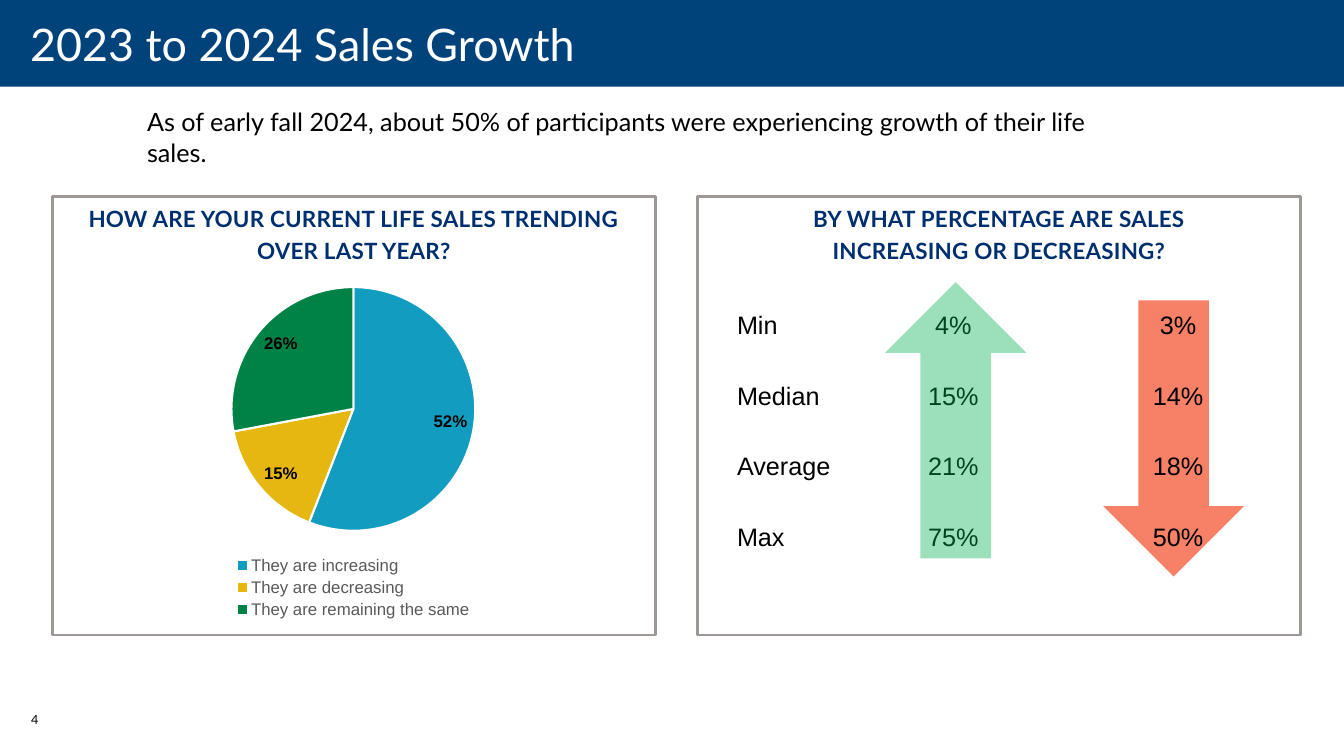
from dataclasses import dataclass

from lxml import etree
from pptx import Presentation
from pptx.chart.data import CategoryChartData
from pptx.dml.color import RGBColor
from pptx.enum.chart import XL_CHART_TYPE, XL_LABEL_POSITION as LabelAt, XL_LEGEND_POSITION as LegendAt
from pptx.enum.shapes import MSO_SHAPE as Preset
from pptx.enum.text import MSO_ANCHOR as Anchor, PP_ALIGN as Align
from pptx.oxml.ns import qn
from pptx.util import Inches, Pt

COLORS = {
    "black": "000000", "white": "FFFFFF", "banner": "00437B",
    "heading": "002F70", "frame": "9D9795", "legend": "595959",
    "up": "00B050", "down": "F22E00",
    "blue": "129DC0", "gold": "E6B711", "green": "008145",
}
NO_STYLE_NO_GRID = "{2D5ABB26-0587-4C30-8999-92F81FD0307C}"


@dataclass
class Panel:
    left: float
    heading: tuple[str, str]


@dataclass
class Arrow:
    left: float
    top: float
    color: str
    opacity: int
    rotation: int = 0


@dataclass
class Answer:
    label: str
    share: float
    color: str


PANELS = [
    Panel(0.52, ("HOW ARE YOUR CURRENT LIFE SALES TRENDING", "OVER LAST YEAR?")),
    Panel(6.92, ("BY WHAT PERCENTAGE ARE SALES", "INCREASING OR DECREASING?")),
]
DOWN_ARROW = Arrow(10.94, 2.98, "down", 60, 180)
UP_ARROW = Arrow(8.78, 2.8, "up", 39)
ANSWERS = [
    Answer("They are increasing", 0.52, "blue"),
    Answer("They are decreasing", 0.15, "gold"),
    Answer("They are remaining the same", 0.26, "green"),
]
STATISTICS = [
    ("Min", "4%", "3%"),
    ("Median", "15%", "14%"),
    ("Average", "21%", "18%"),
    ("Max", "75%", "50%"),
]


def rgb(name: str) -> RGBColor:
    return RGBColor.from_string(COLORS[name])


def style_font(font, size: float, color: str, name: str = "Lato", bold: bool = False) -> None:
    font.name, font.size, font.bold = name, Pt(size), bold
    font.color.rgb = rgb(color)


def add_span(para, text: str, size: float, color: str, name: str = "Lato", bold: bool = False):
    span = para.add_run()
    span.text = text
    style_font(span.font, size, color, name, bold)
    return span


def add_box(page, left: float, top: float, width: float, height: float, anchor=Anchor.TOP):
    box = page.shapes.add_textbox(Inches(left), Inches(top), Inches(width), Inches(height))
    box.text_frame.word_wrap = True
    box.text_frame.vertical_anchor = anchor
    return box.text_frame


def add_solid(page, preset, left: float, top: float, width: float, height: float):
    shape = page.shapes.add_shape(preset, Inches(left), Inches(top), Inches(width), Inches(height))
    shape.shadow.inherit = False
    shape.line.fill.background()
    return shape


def add_panel(page, panel: Panel) -> None:
    frame = add_solid(page, Preset.RECTANGLE, panel.left, 1.95, 5.98, 4.35)
    frame.fill.background()
    frame.line.color.rgb = rgb("frame")
    frame.line.width = Pt(2)

    para = add_box(page, panel.left, 2.08, 5.98, 0.44, Anchor.MIDDLE).paragraphs[0]
    para.alignment, para.line_spacing, para.space_after = Align.CENTER, 1.2, Pt(12.6)
    for index, line in enumerate(panel.heading):
        if index:
            para.add_line_break()
        span = add_span(para, line, 16, "heading", bold=True)
        span.font._element.set("spc", "20")


def add_arrow(page, arrow: Arrow) -> None:
    shape = add_solid(page, Preset.UP_ARROW, arrow.left, arrow.top, 1.4, 2.74)
    shape.rotation = arrow.rotation
    shape.fill.solid()
    shape.fill.fore_color.rgb = rgb(arrow.color)
    color = shape._element.spPr.find(f"{qn('a:solidFill')}/{qn('a:srgbClr')}")
    etree.SubElement(color, qn("a:alpha"), val=str(arrow.opacity * 1000))


def place_part(part, index: int, inner: bool, **fractions: float) -> None:
    """Fix a chart part at fractions of the chart area."""
    for old in part.findall(qn("c:layout")):
        part.remove(old)
    layout = etree.Element(qn("c:layout"))
    manual = etree.SubElement(layout, qn("c:manualLayout"))
    if inner:
        etree.SubElement(manual, qn("c:layoutTarget"), val="inner")
    for mode in ("xMode", "yMode"):
        etree.SubElement(manual, qn(f"c:{mode}"), val="edge")
    for key, value in fractions.items():
        etree.SubElement(manual, qn(f"c:{key}"), val=str(value))
    part.insert(index, layout)


def add_pie(page) -> None:
    data = CategoryChartData(number_format="0%")
    data.categories = [answer.label for answer in ANSWERS]
    data.add_series("Series 1", [answer.share for answer in ANSWERS])
    chart = page.shapes.add_chart(
        XL_CHART_TYPE.PIE, Inches(1.18), Inches(2.7), Inches(4.65), Inches(3.48), data
    ).chart
    chart.has_title = False
    style_font(chart.font, 10, "black", "Arial")

    plot = chart.plots[0]
    plot.vary_by_categories = True
    for index, answer in enumerate(ANSWERS):
        piece = plot.series[0].points[index].format
        piece.fill.solid()
        piece.fill.fore_color.rgb = rgb(answer.color)
        piece.line.color.rgb = rgb("white")
        piece.line.width = Pt(1.5)

    labels = plot.series[0].data_labels
    labels.show_value = True
    labels.number_format, labels.number_format_is_linked = "0%", False
    labels.position = LabelAt.INSIDE_END
    style_font(labels.font, 12, "black", "Arial", True)

    chart.has_legend = True
    legend = chart.legend
    legend.position, legend.include_in_layout = LegendAt.BOTTOM, False
    style_font(legend.font, 12, "legend", "Arial")
    place_part(legend._element, 1, False, x=0.24, y=0.8, w=0.52, h=0.2)
    place_part(chart._chartSpace.chart.plotArea, 0, True, x=0.24, y=0.04, w=0.52, h=0.7)


def add_statistics(page) -> None:
    table = page.shapes.add_table(
        len(STATISTICS), 3, Inches(7.3), Inches(2.88), Inches(5.6), Inches(2.8)
    ).table
    table.first_row = table.horz_banding = False
    table._tbl.tblPr.find(qn("a:tableStyleId")).text = NO_STYLE_NO_GRID
    for column, width in zip(table.columns, (1.14, 2.03, 2.43)):
        column.width = Inches(width)
    for row, texts in zip(table.rows, STATISTICS):
        row.height = Inches(0.7)
        for index, (cell, text) in enumerate(zip(row.cells, texts)):
            cell.fill.background()
            cell.vertical_anchor = Anchor.MIDDLE
            cell.margin_left = cell.margin_top = cell.margin_right = Inches(0.01)
            cell.margin_bottom = 0
            para = cell.text_frame.paragraphs[0]
            para.alignment = Align.CENTER if index else Align.LEFT
            add_span(para, text, 18, "black", "Arial")


def main() -> None:
    deck = Presentation()
    deck.slide_width, deck.slide_height = Inches(13.33), Inches(7.5)
    page = deck.slides.add_slide(deck.slide_layouts[6])

    # Title banner
    banner = add_solid(page, Preset.RECTANGLE, 0, 0, 13.33, 0.86)
    banner.fill.solid()
    banner.fill.fore_color.rgb = rgb("banner")
    title = add_box(page, 0, -0.05, 13.33, 0.97, Anchor.MIDDLE)
    title.margin_left, title.margin_right = Inches(0.3), Inches(0.2)
    title.margin_top = title.margin_bottom = 0
    add_span(title.paragraphs[0], "2023 to 2024 Sales Growth", 32, "white")

    # Summary and page number
    summary = "As of early fall 2024, about 50% of participants were experiencing growth of their life sales."
    add_span(add_box(page, 1.36, 1.01, 9.99, 0.4).paragraphs[0], summary, 18, "black")
    add_span(add_box(page, 0.21, 7.01, 0.49, 0.4).paragraphs[0], "4", 9, "black")

    # Panels; the table lies between the two arrows
    for panel in PANELS:
        add_panel(page, panel)
    add_pie(page)
    add_arrow(page, DOWN_ARROW)
    add_statistics(page)
    add_arrow(page, UP_ARROW)

    deck.save("out.pptx")


if __name__ == "__main__":
    main()
